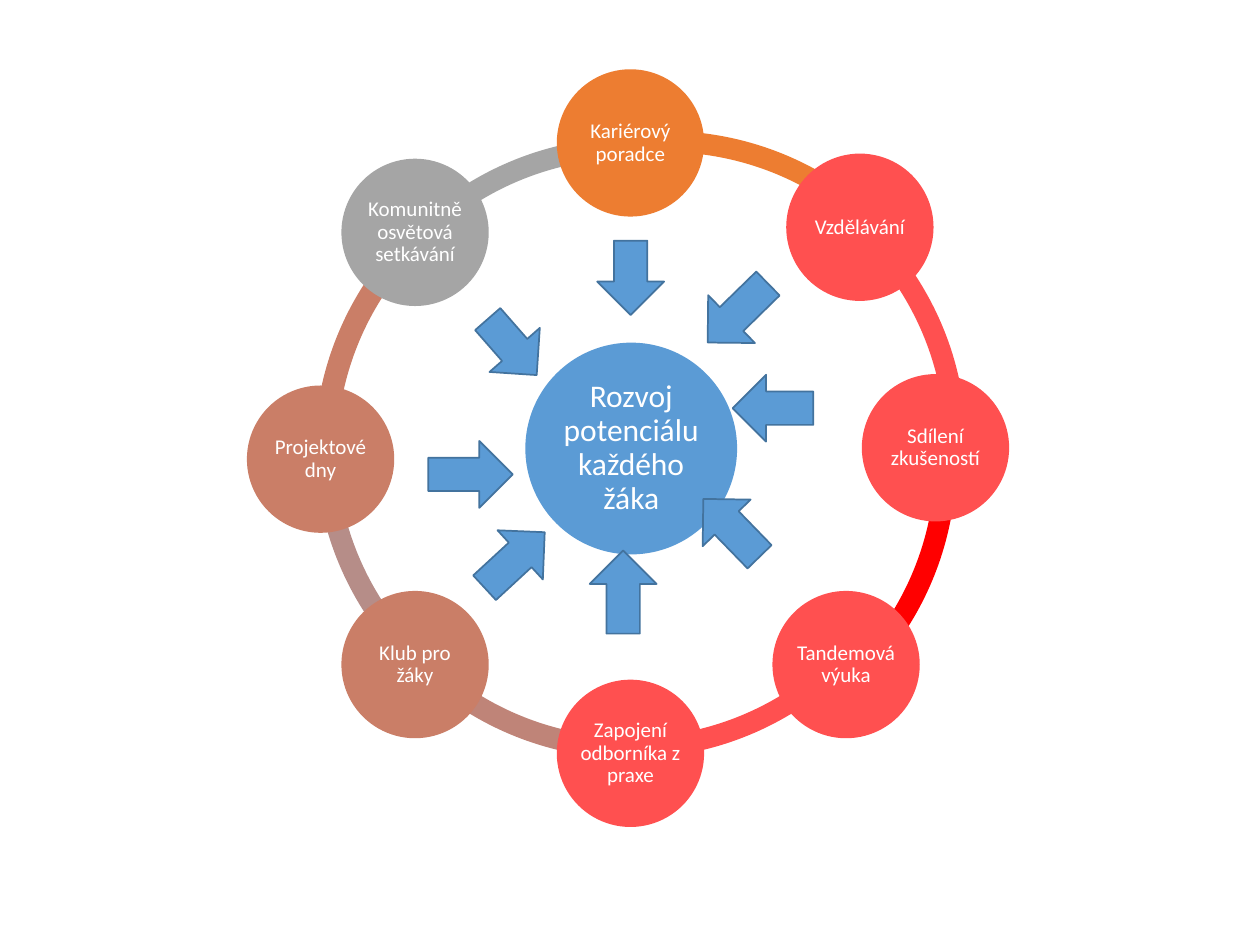
import dataclasses
from typing import Optional

import pptx
import pptx.dml.color
import pptx.enum.shapes
import pptx.enum.text
import pptx.util

Pt = pptx.util.Pt
Kind = pptx.enum.shapes.MSO_SHAPE


@dataclasses.dataclass(frozen=True)
class Theme:
    blue: str = "5B9BD5"
    blue_edge: str = "43739E"
    orange: str = "ED7D31"
    coral: str = "FF5050"
    red: str = "FF0000"
    copper: str = "CA7E67"
    rose: str = "B68D88"
    clay: str = "BF8478"
    grey: str = "A5A5A5"
    white: str = "FFFFFF"
    font: str = "Calibri"
    goal_size: float = 18
    topic_size: float = 12


@dataclasses.dataclass(frozen=True)
class Arc:
    left: float
    top: float
    start: float
    end: float
    color: str
    width: float = 355
    edge: Optional[str] = None


@dataclasses.dataclass(frozen=True)
class Bubble:
    label: str
    left: float
    top: float
    color: str
    diameter: float = 84.2
    text_size: float = Theme.topic_size
    inset: float = 1.2


@dataclasses.dataclass(frozen=True)
class Arrow:
    kind: Kind
    left: float
    top: float
    width: float
    height: float
    rotation: float = 0


THEME = Theme()
RING_HEIGHT = 355
RING_THICKNESS = 0.034
ARROW_BREADTH = 38.2

ARCS = [
    Arc(182.9, 78.5, 135, 162, THEME.grey),
    Arc(180, 81.4, 107.3, 135.71, THEME.copper, edge=THEME.copper),
    Arc(180, 76.3, 80.24, 106.27, THEME.rose),
    Arc(182.9, 78.5, 54, 81, THEME.clay),
    Arc(182.9, 78.5, 27, 54, THEME.coral),
    Arc(191.5, 85.7, 0, 27, THEME.red),
    Arc(195.1, 77, 191.08, 2.09, THEME.coral, width=357.1),
    Arc(203, 74.9, 159.99, 188.27, THEME.orange),
]

BUBBLES = [
    Bubble("Rozvoj potenciálu každého žáka", 300.2, 195.8, THEME.blue,
           diameter=121, text_size=THEME.goal_size, inset=1.8),
    Bubble("Kariérový poradce", 318.2, 39.6, THEME.orange),
    Bubble("Vzdělávání", 449.3, 87.8, THEME.coral),
    Bubble("Sdílení zkušeností", 492.5, 213.8, THEME.coral),
    Bubble("Tandemová výuka", 441.4, 337.7, THEME.coral),
    Bubble("Zapojení odborníka z praxe", 318.2, 388.4, THEME.coral),
    Bubble("Klub pro žáky", 195.1, 337.7, THEME.copper),
    Bubble("Projektové dny", 141.1, 220.3, THEME.copper),
    Bubble("Komunitně osvětová setkávání", 195.1, 90.7, THEME.grey),
]

ARROWS = [
    Arrow(Kind.DOWN_ARROW, 341.3, 137.5, ARROW_BREADTH, 42.5),
    Arrow(Kind.DOWN_ARROW, 402.5, 154.8, ARROW_BREADTH, 48.2, 45.6),
    Arrow(Kind.DOWN_ARROW, 422.6, 210.2, ARROW_BREADTH, 46.1, 90),
    Arrow(Kind.DOWN_ARROW, 273.6, 177.1, ARROW_BREADTH, 42.5, 318.8),
    Arrow(Kind.UP_ARROW, 337, 314.6, ARROW_BREADTH, 47.5),
    Arrow(Kind.RIGHT_ARROW, 244.8, 252, 48.2, ARROW_BREADTH),
    Arrow(Kind.UP_ARROW, 275, 296.6, ARROW_BREADTH, 46.8, 47.3),
    Arrow(Kind.UP_ARROW, 398.9, 278.6, ARROW_BREADTH, 46.1, 315.8),
]


def rgb(color: str) -> pptx.dml.color.RGBColor:
    return pptx.dml.color.RGBColor.from_string(color)


def apply_format(target, values: dict) -> None:
    for name, value in values.items():
        setattr(target, name, value)


def add_filled(slide, kind: Kind, left: float, top: float, width: float,
               height: float, color: str, edge: Optional[str] = None,
               edge_width: float = 1):
    figure = slide.shapes.add_shape(kind, Pt(left), Pt(top), Pt(width), Pt(height))
    figure.shadow.inherit = False
    figure.fill.solid()
    figure.fill.fore_color.rgb = rgb(color)
    if edge:
        figure.line.color.rgb = rgb(edge)
        figure.line.width = Pt(edge_width)
    else:
        figure.line.fill.background()
    return figure


def draw_arc(slide, arc: Arc) -> None:
    segment = add_filled(slide, Kind.BLOCK_ARC, arc.left, arc.top, arc.width,
                         RING_HEIGHT, arc.color, arc.edge, 0.75)
    for index, value in enumerate((arc.start, arc.end, RING_THICKNESS)):
        segment.adjustments[index] = value


def draw_bubble(slide, bubble: Bubble) -> None:
    circle = add_filled(slide, Kind.OVAL, bubble.left, bubble.top,
                        bubble.diameter, bubble.diameter, bubble.color)
    inset = Pt(bubble.inset)
    apply_format(circle.text_frame, {
        "word_wrap": True,
        "vertical_anchor": pptx.enum.text.MSO_ANCHOR.MIDDLE,
        "margin_left": inset,
        "margin_right": inset,
        "margin_top": inset,
        "margin_bottom": inset,
    })
    label = circle.text_frame.paragraphs[0]
    apply_format(label, {
        "text": bubble.label,
        "alignment": pptx.enum.text.PP_ALIGN.CENTER,
        "line_spacing": 0.9,
    })
    font = label.runs[0].font
    apply_format(font, {"name": THEME.font, "size": Pt(bubble.text_size)})
    font.color.rgb = rgb(THEME.white)


def draw_arrow(slide, arrow: Arrow) -> None:
    pointer = add_filled(slide, arrow.kind, arrow.left, arrow.top, arrow.width,
                         arrow.height, THEME.blue, THEME.blue_edge)
    pointer.rotation = arrow.rotation


def main() -> None:
    deck = pptx.Presentation()
    apply_format(deck, {"slide_width": Pt(720), "slide_height": Pt(540)})
    slide = deck.slides.add_slide(deck.slide_layouts[6])
    for arc in ARCS:
        draw_arc(slide, arc)
    for bubble in BUBBLES:
        draw_bubble(slide, bubble)
    for arrow in ARROWS:
        draw_arrow(slide, arrow)
    deck.save("out.pptx")


if __name__ == "__main__":
    main()
